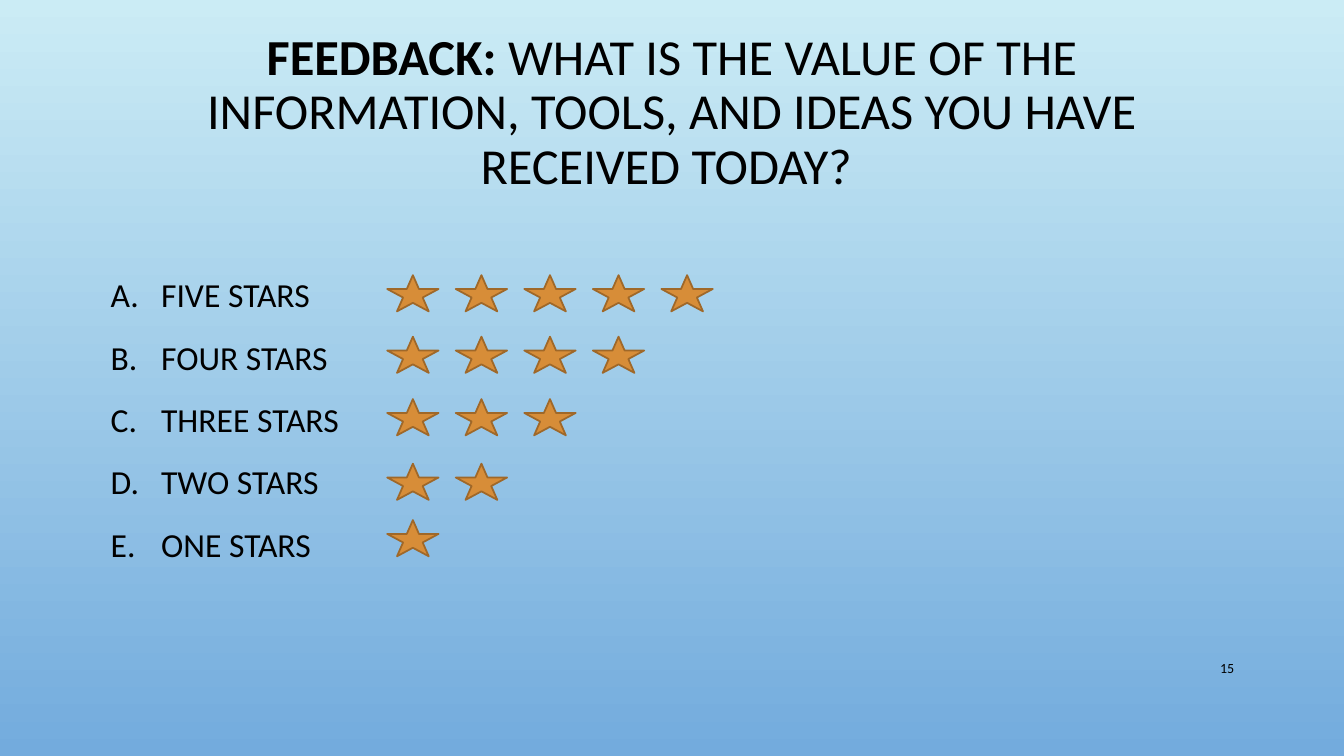
from dataclasses import dataclass

from lxml import etree
from pptx import Presentation
from pptx.dml.color import RGBColor
from pptx.enum.shapes import MSO_SHAPE
from pptx.enum.text import MSO_ANCHOR, PP_ALIGN
from pptx.oxml.ns import qn
from pptx.util import Inches, Pt

STAR = MSO_SHAPE.STAR_5_POINT
TOP, MIDDLE = MSO_ANCHOR.TOP, MSO_ANCHOR.MIDDLE
LEFT, CENTER, RIGHT = PP_ALIGN.LEFT, PP_ALIGN.CENTER, PP_ALIGN.RIGHT

QUESTION = (
    ("FEEDBACK: ", True),
    ("WHAT IS THE VALUE OF THE INFORMATION, TOOLS, AND IDEAS YOU HAVE RECEIVED TODAY? ", False),
)
RATINGS = (
    ("FIVE STARS", 5, 2.73),
    ("FOUR STARS", 4, 3.34),
    ("THREE STARS", 3, 3.96),
    ("TWO STARS", 2, 4.6),
    ("ONE STARS", 1, 5.16),
)
PAGE_NUMBER = "15"


@dataclass(frozen=True)
class Theme:
    font: str = "Calibri"
    ink: str = "000000"
    sky_top: str = "CBECF5"
    sky_bottom: str = "73ABDD"
    star: str = "D78D38"
    star_edge: str = "9F6829"
    title_size: int = 36
    body_size: int = 24
    number_size: int = 10


THEME = Theme()
WIDTH, HEIGHT = 13.33, 7.5
MARGIN = 1
CONTENT_WIDTH = WIDTH - 2 * MARGIN
STAR_LEFT, STAR_PITCH = 3.84, 0.68
STAR_WIDTH, STAR_HEIGHT = 0.51, 0.36
HANGING = Inches(0.5)


def add_text_frame(slide, left, top, width, height, anchor):
    frame = slide.shapes.add_textbox(
        Inches(left), Inches(top), Inches(width), Inches(height)).text_frame
    frame.word_wrap = True
    frame.vertical_anchor = anchor
    return frame


def style(paragraph, size, alignment):
    paragraph.alignment = alignment
    paragraph.font.name = THEME.font
    paragraph.font.size = Pt(size)
    paragraph.font.color.rgb = RGBColor.from_string(THEME.ink)


def add_letter(paragraph):
    properties = paragraph._p.get_or_add_pPr()
    properties.set("marL", str(HANGING))
    properties.set("indent", str(-HANGING))
    etree.SubElement(properties, qn("a:buFont"), typeface=THEME.font)
    etree.SubElement(properties, qn("a:buAutoNum"), type="alphaUcPeriod")


def paint_background(slide):
    fill = slide.background.fill
    fill.gradient()
    fill.gradient_angle = 270
    for stop, position, color in zip(
            fill.gradient_stops, (0, 1), (THEME.sky_top, THEME.sky_bottom)):
        stop.position = position
        stop.color.rgb = RGBColor.from_string(color)


def add_question(slide):
    frame = add_text_frame(slide, MARGIN, 0.25, CONTENT_WIDTH, 1.75, MIDDLE)
    question = frame.paragraphs[0]
    question.line_spacing = 0.9
    style(question, THEME.title_size, CENTER)
    for words, bold in QUESTION:
        run = question.add_run()
        run.text = words
        run.font.bold = bold


def add_choices(slide):
    frame = add_text_frame(slide, MARGIN, 2.59, CONTENT_WIDTH, 3.74, TOP)
    for index, (label, _, _) in enumerate(RATINGS):
        choice = frame.add_paragraph() if index else frame.paragraphs[0]
        choice.text = label
        choice.line_spacing = 1.2
        choice.space_before = Pt(10 if index else 0)
        add_letter(choice)
        style(choice, THEME.body_size, LEFT)


def add_stars(slide):
    for _, count, top in RATINGS:
        for column in range(count):
            star = slide.shapes.add_shape(
                STAR, Inches(STAR_LEFT + column * STAR_PITCH), Inches(top),
                Inches(STAR_WIDTH), Inches(STAR_HEIGHT))
            star.shadow.inherit = False
            star.fill.solid()
            star.fill.fore_color.rgb = RGBColor.from_string(THEME.star)
            star.line.color.rgb = RGBColor.from_string(THEME.star_edge)
            star.line.width = Pt(1.25)


def add_page_number(slide):
    frame = add_text_frame(slide, 11.5, 6.43, 0.84, 0.4, MIDDLE)
    number = frame.paragraphs[0]
    number.text = PAGE_NUMBER
    style(number, THEME.number_size, RIGHT)


def main():
    presentation = Presentation()
    presentation.slide_width = Inches(WIDTH)
    presentation.slide_height = Inches(HEIGHT)
    slide = presentation.slides.add_slide(presentation.slide_layouts[6])
    paint_background(slide)
    add_question(slide)
    add_choices(slide)
    add_page_number(slide)
    add_stars(slide)
    presentation.save("out.pptx")


if __name__ == "__main__":
    main()
